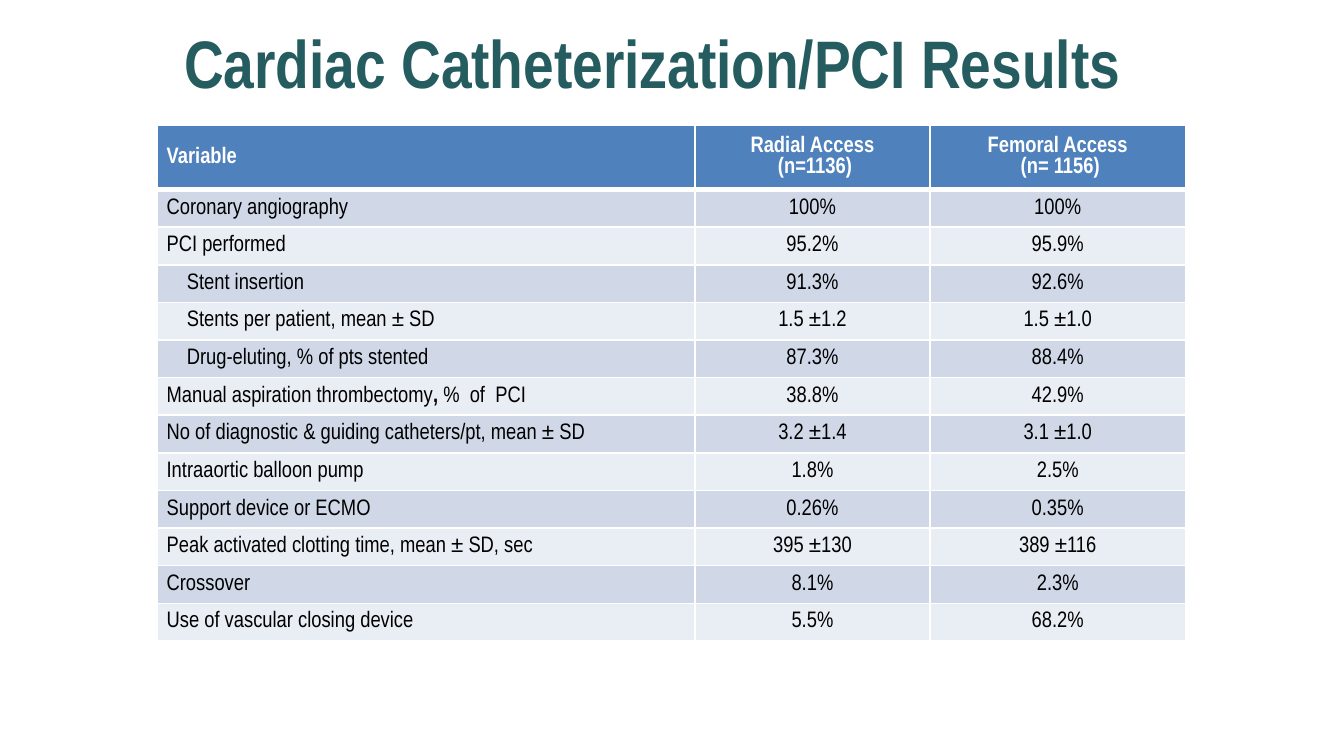
import dataclasses

import pptx
import pptx.dml.color
import pptx.enum.text
import pptx.oxml
import pptx.oxml.ns
import pptx.util

ALIGN = pptx.enum.text.PP_ALIGN
MIDDLE = pptx.enum.text.MSO_ANCHOR.MIDDLE
INCH = pptx.util.Inches


@dataclasses.dataclass(frozen=True)
class Theme:
    """Colours, type sizes and spacing of the slide."""

    font: str = "Arial Narrow"
    title_size: float = 36
    table_size: float = 12
    title: str = "245C60"
    header: str = "4F81BD"
    bands: tuple = ("D0D8E8", "E9EDF4")
    light: str = "FFFFFF"
    dark: str = "000000"
    inset: float = 0.07
    indent: float = 0.15
    leading: float = 1.0
    rule: float = 1
    header_rule: float = 3


THEME = Theme()
SLIDE_WIDTH = 10
SLIDE_HEIGHT = SLIDE_WIDTH * 9 / 16
TITLE_BOX = (0.24, 0.03, 9.23, 0.86)
TABLE_BOX = (1.17, 0.93, 7.65, 3.84)
COLUMN_SHARES = (4 / 7.65, 1.75 / 7.65, 1.9 / 7.65)
HEADER_SHARE = 1 / 8

HEADINGS = ("Variable", "Radial Access\n (n=1136)", "Femoral Access\n (n= 1156)")
RESULTS = (
    ("Coronary angiography", "100%", "100%"),
    ("PCI performed", "95.2%", "95.9%"),
    ("Stent insertion", "91.3%", "92.6%"),
    ("Stents per patient, mean ± SD", "1.5 ±1.2", "1.5 ±1.0"),
    ("Drug-eluting, % of pts stented", "87.3%", "88.4%"),
    (("Manual aspiration thrombectomy", ", ", "%  of  PCI"), "38.8%", "42.9%"),
    ("No of diagnostic & guiding catheters/pt, mean ± SD", "3.2 ±1.4", "3.1 ±1.0"),
    ("Intraaortic balloon pump", "1.8%", "2.5%"),
    ("Support device or ECMO", "0.26%", "0.35%"),
    ("Peak activated clotting time, mean ± SD, sec", "395 ±130", "389 ±116"),
    ("Crossover", "8.1%", "2.3%"),
    ("Use of vascular closing device", "5.5%", "68.2%"),
)
STENT_ROWS = (3, 4, 5)


def apply(target, values):
    """Set each named attribute of the target."""
    for name, value in values.items():
        setattr(target, name, value)


def style_font(font, size, color, bold):
    """Give a font the theme typeface and the given look."""
    apply(font, {"name": THEME.font, "size": pptx.util.Pt(size), "bold": bold})
    font.color.rgb = pptx.dml.color.RGBColor.from_string(color)


def add_border(cell, side, width):
    """Draw one light border on a side of a cell."""
    line = pptx.oxml.parse_xml(
        f'<a:{side} {pptx.oxml.ns.nsdecls("a")} w="{pptx.util.Pt(width)}">'
        f'<a:solidFill><a:srgbClr val="{THEME.light}"/></a:solidFill></a:{side}>'
    )
    cell._tc.get_or_add_tcPr().append(line)


def fill_cell(cell, content, row, column):
    """Write and format one table cell by its row and column."""
    is_header = row == 0
    indent = THEME.indent if column == 0 and row in STENT_ROWS else 0
    apply(cell, {
        "margin_left": INCH(THEME.inset + indent),
        "margin_right": INCH(THEME.inset),
        "margin_top": 0,
        "margin_bottom": 0,
        "vertical_anchor": MIDDLE,
    })
    rules = {
        "lnL": THEME.rule,
        "lnR": THEME.rule,
        "lnT": THEME.header_rule if row == 1 else THEME.rule,
        "lnB": THEME.header_rule if is_header else THEME.rule,
    }
    for side, width in rules.items():
        add_border(cell, side, width)
    background = THEME.header if is_header else THEME.bands[(row - 1) % 2]
    cell.fill.solid()
    cell.fill.fore_color.rgb = pptx.dml.color.RGBColor.from_string(background)

    pieces = (content,) if isinstance(content, str) else content
    lines = pieces[0].split("\n") if len(pieces) == 1 else [pieces]
    for index, line in enumerate(lines):
        frame = cell.text_frame
        paragraph = frame.paragraphs[0] if index == 0 else frame.add_paragraph()
        apply(paragraph, {
            "alignment": ALIGN.CENTER if column else ALIGN.LEFT,
            "line_spacing": THEME.leading,
        })
        for piece in (line,) if isinstance(line, str) else line:
            run = paragraph.add_run()
            run.text = piece
            color = THEME.light if is_header else THEME.dark
            style_font(run.font, THEME.table_size, color, is_header or piece == ", ")


def place_title(slide, box):
    """Place the slide title in its box."""
    title = slide.shapes.title
    apply(title, dict(zip(("left", "top", "width", "height"), map(INCH, box))))
    apply(title.text_frame, {
        "text": "Cardiac Catheterization/PCI Results",
        "vertical_anchor": MIDDLE,
        "word_wrap": True,
    })
    heading = title.text_frame.paragraphs[0]
    heading.alignment = ALIGN.CENTER
    style_font(heading.runs[0].font, THEME.title_size, THEME.title, True)


def place_results(slide, box):
    """Place the comparison table of both access routes in its box."""
    rows = (HEADINGS, *RESULTS)
    width, height = box[2:]
    table = slide.shapes.add_table(len(rows), len(HEADINGS), *map(INCH, box)).table
    for column, share in zip(table.columns, COLUMN_SHARES):
        column.width = INCH(width * share)
    result_share = (1 - HEADER_SHARE) / len(RESULTS)
    for row, values in enumerate(rows):
        share = result_share if row else HEADER_SHARE
        table.rows[row].height = INCH(height * share)
        for column, content in enumerate(values):
            fill_cell(table.cell(row, column), content, row, column)


def main():
    """Build and save the presentation."""
    deck = pptx.Presentation()
    apply(deck, {"slide_width": INCH(SLIDE_WIDTH), "slide_height": INCH(SLIDE_HEIGHT)})
    slide = deck.slides.add_slide(deck.slide_layouts.get_by_name("Title Only"))
    place_title(slide, TITLE_BOX)
    place_results(slide, TABLE_BOX)
    deck.save("out.pptx")


if __name__ == "__main__":
    main()
